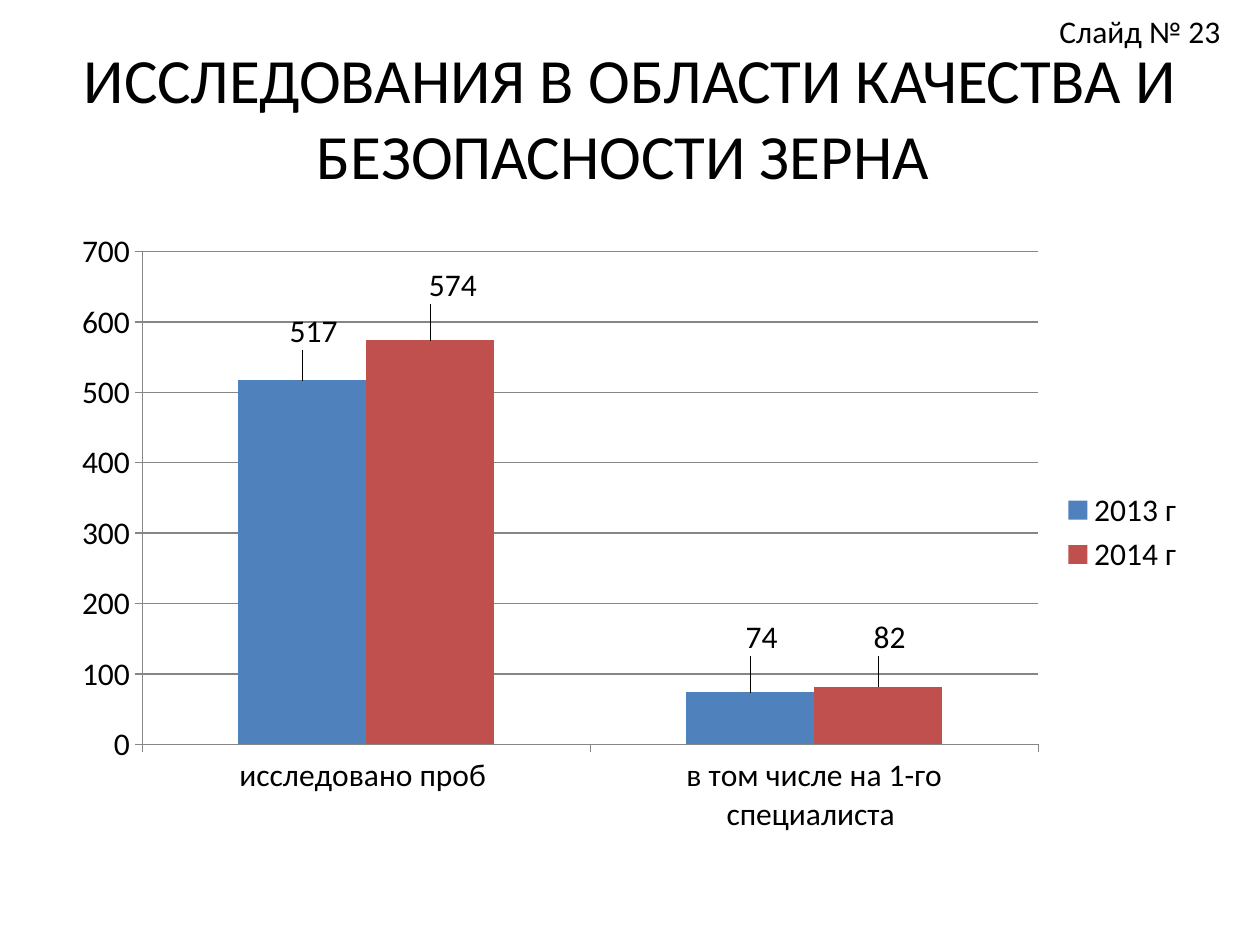
from lxml.etree import SubElement
from pptx import Presentation
from pptx.chart.data import CategoryChartData
from pptx.dml.color import RGBColor
from pptx.enum.chart import (XL_CHART_TYPE, XL_LABEL_POSITION,
                             XL_LEGEND_POSITION, XL_TICK_MARK)
from pptx.enum.text import MSO_ANCHOR, PP_ALIGN
from pptx.oxml.ns import qn
from pptx.util import Inches, Pt

THEME = {
    "font": "Calibri",
    "text": RGBColor.from_string("000000"),
    "axis": RGBColor.from_string("868686"),
    "years": [RGBColor.from_string("4F81BD"), RGBColor.from_string("C0504D")],
    "title_size": Pt(36),
    "body_size": Pt(18),
    "axis_width": Pt(0.75),
}

deck = Presentation()
deck.slide_width = Inches(10)
deck.slide_height = Inches(7.5)
COLUMN = deck.slide_width // 20
ROW = deck.slide_height // 150
slide = deck.slides.add_slide(deck.slide_layouts[6])


def add_caption(wording, left, top, width, height, size, align, anchor, wrap):
    caption = slide.shapes.add_textbox(
        int(left * COLUMN), top * ROW, int(width * COLUMN), height * ROW)
    frame = caption.text_frame
    frame.text = wording
    frame.word_wrap = wrap
    frame.vertical_anchor = anchor
    frame.paragraphs[0].alignment = align
    font = frame.paragraphs[0].runs[0].font
    font.name = THEME["font"]
    font.size = size
    font.color.rgb = THEME["text"]


def add_manual_layout(parent, position, **settings):
    layout = SubElement(parent, qn("c:layout"))
    manual = SubElement(layout, qn("c:manualLayout"))
    for setting, value in settings.items():
        SubElement(manual, qn(f"c:{setting}")).set("val", str(value))
    parent.insert(position, layout)


add_caption("ИССЛЕДОВАНИЯ В ОБЛАСТИ КАЧЕСТВА И БЕЗОПАСНОСТИ ЗЕРНА ",
            1, 6, 18, 25, THEME["title_size"], PP_ALIGN.CENTER,
            MSO_ANCHOR.MIDDLE, True)

samples = CategoryChartData()
samples.categories = ["исследовано проб ", "в том числе на 1-го специалиста "]
samples.add_series("2013 г", [517, 74])
samples.add_series("2014 г", [574, 82])
chart = slide.shapes.add_chart(
    XL_CHART_TYPE.COLUMN_CLUSTERED, COLUMN, 35 * ROW, 18 * COLUMN, 99 * ROW,
    samples).chart
chart.has_title = False
chart.font.name = THEME["font"]
chart.font.size = THEME["body_size"]
chart.font.color.rgb = THEME["text"]
chart.has_legend = True
chart.legend.position = XL_LEGEND_POSITION.RIGHT
chart.legend.include_in_layout = False

chart.value_axis.minimum_scale = 0
chart.value_axis.maximum_scale = 700
chart.value_axis.major_unit = 100
chart.value_axis.has_major_gridlines = True
for axis in (chart.category_axis, chart.value_axis):
    axis.major_tick_mark = XL_TICK_MARK.OUTSIDE
for ruled in (chart.category_axis, chart.value_axis,
              chart.value_axis.major_gridlines):
    ruled.format.line.color.rgb = THEME["axis"]
    ruled.format.line.width = THEME["axis_width"]

bars = chart.plots[0]
bars.gap_width = 150
bars.overlap = 0
bars.vary_by_categories = False
label_shifts = [[(0.01, -0.04), (0.01, -0.05)],
                [(0.02, -0.05), (0.01, -0.04)]]
for year, color, shifts in zip(bars.series, THEME["years"], label_shifts):
    year.format.fill.solid()
    year.format.fill.fore_color.rgb = color
    year.data_labels.show_value = True
    for index, (across, down) in enumerate(shifts):
        year.points[index].data_label.position = XL_LABEL_POSITION.OUTSIDE_END
    for label, (across, down) in zip(
            year.data_labels._element.findall(qn("c:dLbl")), shifts):
        add_manual_layout(label, 1, x=across, y=down)

plot_area = chart._chartSpace.chart.plotArea
for automatic in plot_area.findall(qn("c:layout")):
    plot_area.remove(automatic)
add_manual_layout(plot_area, 0, layoutTarget="inner", xMode="edge",
                  yMode="edge", x=0.07, y=0.05, w=0.79, h=0.79)

add_caption("Слайд № 23", 16.62, 1, 3.38, 8, THEME["body_size"],
            PP_ALIGN.LEFT, MSO_ANCHOR.TOP, False)

deck.save("out.pptx")
